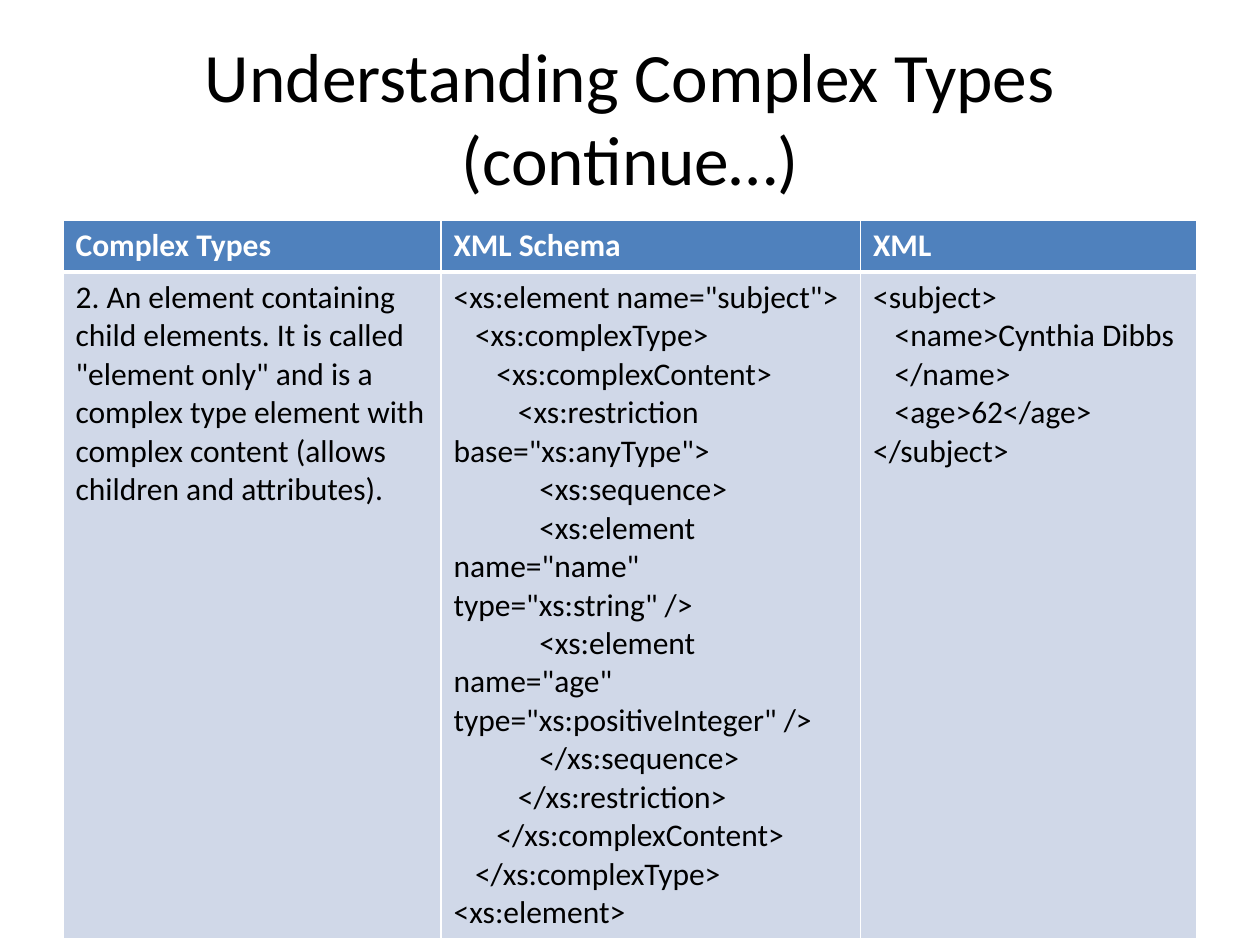
from dataclasses import dataclass

from lxml import etree
from pptx import Presentation
from pptx.dml.color import RGBColor
from pptx.enum.text import MSO_ANCHOR, MSO_AUTO_SIZE, PP_ALIGN
from pptx.oxml.ns import qn
from pptx.util import Inches, Pt

CENTER = PP_ALIGN.CENTER
MIDDLE = MSO_ANCHOR.MIDDLE
NO_AUTOFIT = MSO_AUTO_SIZE.NONE
TITLE_ONLY_LAYOUT = 5

FONT = "Calibri"
WHITE, BLACK = "FFFFFF", "000000"
HEADER_BLUE, BODY_BLUE = "4F81BD", "D0D8E8"
INDENT_STEP = 0.17
THIN, THICK = 1, 3
HEADER_HEIGHT, BODY_HEIGHT = 0.41, 5.2


@dataclass
class Line:
    text: str
    level: int = 0


@dataclass
class Column:
    heading: str
    width: float
    lines: list[Line]


COLUMNS = [
    Column("Complex Types", 3, [
        Line('2. An element containing child elements. It is called "element only" '
             "and is a complex type element with complex content "
             "(allows children and attributes)."),
    ]),
    Column("XML Schema", 3.33, [
        Line('<xs:element name="subject">'),
        Line("<xs:complexType>", 1),
        Line("<xs:complexContent>", 2),
        Line('<xs:restriction base="xs:anyType">', 3),
        Line("<xs:sequence>", 4),
        Line('<xs:element name="name" type="xs:string" />', 4),
        Line('<xs:element name="age" type="xs:positiveInteger" />', 4),
        Line("</xs:sequence>", 4),
        Line("</xs:restriction>", 3),
        Line("</xs:complexContent>", 2),
        Line("</xs:complexType>", 1),
        Line("<xs:element>"),
    ]),
    Column("XML", 2.67, [
        Line("<subject>"),
        Line("<name>Cynthia Dibbs", 1),
        Line("</name>", 1),
        Line("<age>62</age>", 1),
        Line("</subject>"),
    ]),
]


def color(code: str) -> RGBColor:
    return RGBColor.from_string(code)


def write(para, text: str, *, size: float = 18, ink: str = BLACK,
          bold: bool = False, level: int = 0) -> None:
    """Add text to a paragraph; level indents its first line only."""
    span = para.add_run()
    span.text = text
    span.font.name = FONT
    span.font.size = Pt(size)
    span.font.bold = bold
    span.font.color.rgb = color(ink)
    if level:
        properties = para._p.get_or_add_pPr()
        properties.set("marL", "0")
        properties.set("indent", str(Inches(level * INDENT_STEP)))


def add_borders(cell, *, top: float, bottom: float) -> None:
    properties = cell._tc.get_or_add_tcPr()
    widths = {"a:lnL": THIN, "a:lnR": THIN, "a:lnT": top, "a:lnB": bottom}
    for tag, width in widths.items():
        border = etree.SubElement(properties, qn(tag), w=str(Pt(width)))
        fill = etree.SubElement(border, qn("a:solidFill"))
        etree.SubElement(fill, qn("a:srgbClr"), val=WHITE)


def fill_cell(cell, lines: list[Line], *, fill: str, ink: str, bold: bool,
              top: float, bottom: float) -> None:
    add_borders(cell, top=top, bottom=bottom)
    cell.fill.solid()
    cell.fill.fore_color.rgb = color(fill)
    frame = cell.text_frame
    for index, line in enumerate(lines):
        para = frame.add_paragraph() if index else frame.paragraphs[0]
        write(para, line.text, ink=ink, bold=bold, level=line.level)


def add_title(page, text: str) -> None:
    title = page.shapes.title
    title.left, title.top = Inches(0.5), Inches(0.3)
    title.width, title.height = Inches(9), Inches(1.25)
    frame = title.text_frame
    frame.word_wrap = True
    frame.auto_size = NO_AUTOFIT
    frame.vertical_anchor = MIDDLE
    para = frame.paragraphs[0]
    para.alignment = CENTER
    write(para, text, size=39.6)


def add_type_table(page, columns: list[Column]) -> None:
    table = page.shapes.add_table(
        2, len(columns), Inches(0.5), Inches(1.75),
        Inches(sum(column.width for column in columns)),
        Inches(HEADER_HEIGHT + BODY_HEIGHT)).table
    table.rows[0].height = Inches(HEADER_HEIGHT)
    table.rows[1].height = Inches(BODY_HEIGHT)
    for index, column in enumerate(columns):
        table.columns[index].width = Inches(column.width)
        fill_cell(table.cell(0, index), [Line(column.heading)], fill=HEADER_BLUE,
                  ink=WHITE, bold=True, top=THIN, bottom=THICK)
        fill_cell(table.cell(1, index), column.lines, fill=BODY_BLUE,
                  ink=BLACK, bold=False, top=THICK, bottom=THIN)


def main() -> None:
    deck = Presentation()
    deck.slide_width, deck.slide_height = Inches(10), Inches(7.5)
    page = deck.slides.add_slide(deck.slide_layouts[TITLE_ONLY_LAYOUT])
    add_title(page, "Understanding Complex Types (continue…)")
    add_type_table(page, COLUMNS)
    deck.save("out.pptx")


if __name__ == "__main__":
    main()
